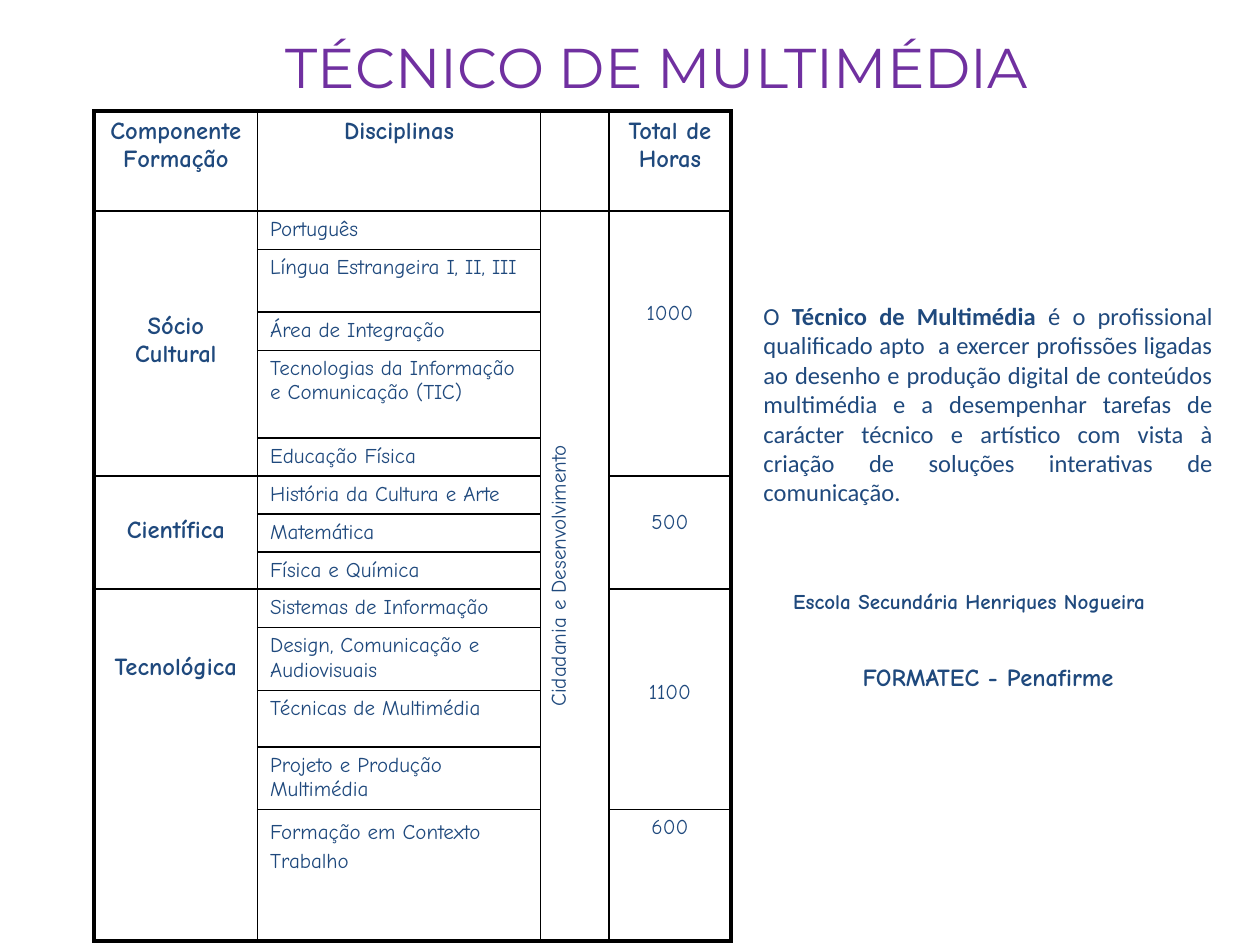
"""Build the course plan slide for the multimedia technician programme."""
from dataclasses import dataclass
from itertools import product

from lxml.etree import SubElement
from pptx import Presentation
from pptx.dml.color import RGBColor
from pptx.enum.text import MSO_ANCHOR as Anchor, MSO_AUTO_SIZE as AutoSize, PP_ALIGN as Align
from pptx.oxml.ns import qn
from pptx.util import Pt

NAVY, PURPLE, BLACK = "1F497D", "7030A0", "000000"
COLUMN_WIDTHS = (93.4, 161.8, 39, 69.8)
ROW_HEIGHTS = (57.2, 22, 35.8, 21.8, 50.2, 21.8, 21.6, 21.6, 21.4, 22, 35.8, 32.4, 35.6, 75.2)
THIN, THICK = 1, 2.25
SUBJECTS = (
    "Português", "Língua Estrangeira I, II, III", "Área de Integração",
    "Tecnologias da Informação e Comunicação (TIC)", "Educação Física",
    "História da Cultura e Arte", "Matemática", "Física e Química",
    "Sistemas de Informação", "Design, Comunicação e Audiovisuais",
    "Técnicas de Multimédia", "Projeto e Produção Multimédia",
    "Formação em Contexto Trabalho",
)


@dataclass(frozen=True)
class Entry:
    """A table cell with its text, row span and top margin."""
    row: int
    column: int
    text: str = ""
    span: int = 1
    top: float = 3.6
    bold: bool = False
    align: Align = Align.CENTER
    vertical: bool = False
    line_spacing: float = 1.0


@dataclass(frozen=True)
class Passage:
    """A paragraph of the side text, as runs of text and bold flag."""
    runs: tuple
    font: str
    size: float
    format: dict
    indent: float = 0


HEADERS = [Entry(0, column, text, bold=True) for column, text in
           enumerate(("Componente Formação", "Disciplinas", "", "Total de Horas"))]
COMPONENTS = [
    Entry(1, 0, "Sócio Cultural", 5, 58, True),
    Entry(6, 0, "Científica", 3, 23, True),
    Entry(9, 0, "Tecnológica", 5, 36.5, True),
]
HOURS = [
    Entry(1, 3, "1000", 5, 52), Entry(6, 3, "500", 3, 19.5),
    Entry(9, 3, "1100", 4, 52), Entry(13, 3, "600"),
]
DISCIPLINES = [
    Entry(row, 1, text, align=Align.LEFT, line_spacing=1.2 if row == len(SUBJECTS) else 1.0)
    for row, text in enumerate(SUBJECTS, 1)
]
CITIZENSHIP = Entry(1, 2, "Cidadania e Desenvolvimento", 13, vertical=True)
ENTRIES = [*HEADERS, *COMPONENTS, *DISCIPLINES, CITIZENSHIP, *HOURS]

PASSAGES = (
    Passage((("O ", False), ("Técnico de Multimédia ", True),
             ("é o profissional qualificado apto  a exercer profissões ligadas ao desenho e "
              "produção digital de conteúdos multimédia e a desempenhar tarefas de carácter "
              "técnico e artístico com vista à criação de soluções interativas de comunicação.",
              False)),
            "Calibri", 14, {"alignment": Align.JUSTIFY}),
    Passage((("Escola Secundária Henriques Nogueira", True),),
            "Comic Neue", 12, {"space_before": Pt(46.5)}, indent=17),
    Passage((("FORMATEC - Penafirme", True),),
            "Comic Neue", 14, {"alignment": Align.CENTER, "space_before": Pt(28)}),
)


def apply(target, values: dict) -> None:
    """Set each named attribute on the target."""
    for name, value in values.items():
        setattr(target, name, value)


def color(code: str) -> RGBColor:
    """Return the colour of a hex string."""
    return RGBColor.from_string(code)


def add_run(paragraph, text: str, font: str, size: float, code: str, bold: bool = False) -> None:
    """Append a formatted run to a paragraph."""
    run = paragraph.add_run()
    run.text = text
    apply(run.font, {"name": font, "size": Pt(size), "bold": bold})
    run.font.color.rgb = color(code)


def add_border(cell, side: str, width: float) -> None:
    """Draw one solid border of a cell."""
    properties = cell._tc.get_or_add_tcPr()
    line = SubElement(properties, qn(f"a:ln{side}"), w=str(Pt(width)))
    fill = SubElement(line, qn("a:solidFill"))
    SubElement(fill, qn("a:srgbClr"), val=BLACK)


def draw_borders(table, entry: Entry) -> None:
    """Outline an entry, with thick lines along the table edge."""
    last = entry.row + entry.span - 1
    for row in range(entry.row, last + 1):
        cell = table.cell(row, entry.column)
        add_border(cell, "L", THICK if entry.column == 0 else THIN)
        add_border(cell, "R", THICK if entry.column == len(COLUMN_WIDTHS) - 1 else THIN)
        if row == entry.row:
            add_border(cell, "T", THICK if row == 0 else THIN)
        if row in (entry.row, last):
            add_border(cell, "B", THICK if last == len(ROW_HEIGHTS) - 1 else THIN)


def draw_entry(table, entry: Entry) -> None:
    """Merge, outline and fill in one entry."""
    cell = table.cell(entry.row, entry.column)
    if entry.span > 1:
        cell.merge(table.cell(entry.row + entry.span - 1, entry.column))
    draw_borders(table, entry)
    apply(cell, {"margin_left": Pt(7.2), "margin_right": Pt(7.2),
                 "margin_top": Pt(entry.top), "margin_bottom": Pt(3.6),
                 "vertical_anchor": Anchor.TOP})
    if entry.vertical:
        cell._tc.get_or_add_tcPr().set("vert", "vert270")
    paragraph = cell.text_frame.paragraphs[0]
    apply(paragraph, {"alignment": entry.align, "line_spacing": entry.line_spacing})
    if entry.text:
        add_run(paragraph, entry.text, "Comic Neue", 14 if entry.bold else 12, NAVY, entry.bold)


def draw_plan(slide) -> None:
    """Add the table of components, subjects and hours."""
    table = slide.shapes.add_table(
        len(ROW_HEIGHTS), len(COLUMN_WIDTHS), Pt(53.8), Pt(63.4),
        Pt(sum(COLUMN_WIDTHS)), Pt(sum(ROW_HEIGHTS))).table
    apply(table, {"first_row": False, "horz_banding": False})
    for column, width in zip(table.columns, COLUMN_WIDTHS):
        column.width = Pt(width)
    for row, height in zip(table.rows, ROW_HEIGHTS):
        row.height = Pt(height)
    for entry in ENTRIES:
        draw_entry(table, entry)
    for row, column in product(range(len(ROW_HEIGHTS)), range(len(COLUMN_WIDTHS))):
        table.cell(row, column).fill.background()


def draw_title(slide) -> None:
    """Place and format the slide title."""
    title = slide.shapes.title
    apply(title, {"left": Pt(46.5), "top": Pt(15), "width": Pt(658), "height": Pt(40)})
    apply(title.text_frame, {"word_wrap": False, "auto_size": AutoSize.NONE,
                             "vertical_anchor": Anchor.TOP})
    paragraph = title.text_frame.paragraphs[0]
    paragraph.alignment = Align.CENTER
    add_run(paragraph, "TÉCNICO DE MULTIMÉDIA", "Montserrat", 32, PURPLE)


def draw_profile(slide) -> None:
    """Add the professional profile and the schools beside the table."""
    box = slide.shapes.add_textbox(Pt(429.2), Pt(168.4), Pt(271), Pt(312))
    frame = box.text_frame
    frame.word_wrap = True
    for index, passage in enumerate(PASSAGES):
        paragraph = frame.add_paragraph() if index else frame.paragraphs[0]
        apply(paragraph, passage.format)
        paragraph._p.get_or_add_pPr().set("marL", str(Pt(passage.indent)))
        for text, bold in passage.runs:
            add_run(paragraph, text, passage.font, passage.size, NAVY, bold)


def main() -> None:
    """Build and save the presentation."""
    presentation = Presentation()
    apply(presentation, {"slide_width": Pt(720), "slide_height": Pt(540)})
    slide = presentation.slides.add_slide(presentation.slide_layouts[5])
    draw_title(slide)
    draw_plan(slide)
    draw_profile(slide)
    presentation.save("out.pptx")


if __name__ == "__main__":
    main()
